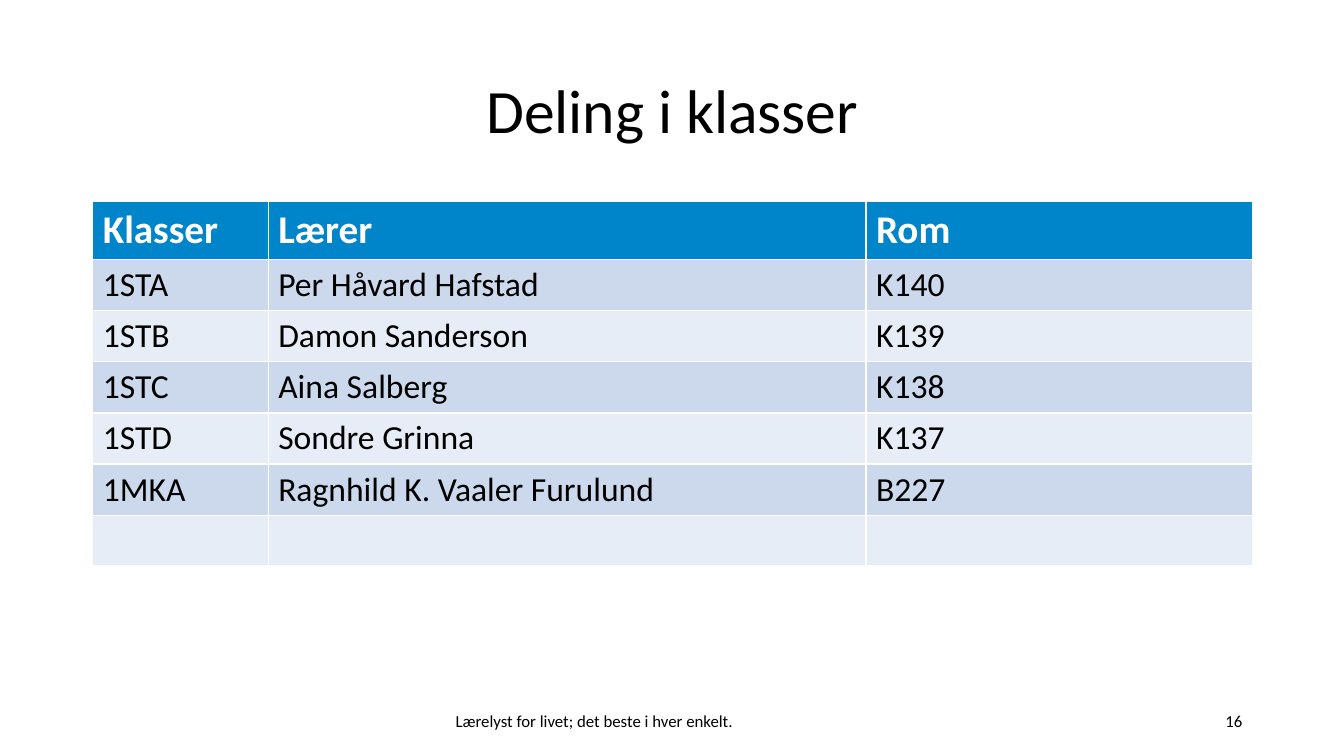
from typing import NamedTuple

from pptx import Presentation
from pptx.dml.color import RGBColor
from pptx.enum.text import MSO_ANCHOR, PP_ALIGN
from pptx.util import Inches, Pt

FONT = "Calibri"
BLACK = RGBColor(0x00, 0x00, 0x00)
WHITE = RGBColor(0xFF, 0xFF, 0xFF)
HEADER_BLUE = RGBColor(0x00, 0x85, 0xCA)
BANDS = (RGBColor(0xCC, 0xD9, 0xEC), RGBColor(0xE7, 0xED, 0xF6))

LEFT, CONTENT_WIDTH = 0.92, 11.5
COLUMN_WIDTHS = (1.74, 5.93, 3.83)
HEADER_HEIGHT, ROW_HEIGHT = 0.57, 0.505


class SchoolClass(NamedTuple):
    name: str
    teacher: str
    room: str


class FooterText(NamedTuple):
    text: str
    left: float
    width: float
    align: PP_ALIGN


HEADINGS = SchoolClass("Klasser", "Lærer", "Rom")
CLASSES = (
    SchoolClass("1STA", "Per Håvard Hafstad", "K140"),
    SchoolClass("1STB", "Damon Sanderson", "K139"),
    SchoolClass("1STC", "Aina Salberg", "K138"),
    SchoolClass("1STD", "Sondre Grinna", "K137"),
    SchoolClass("1MKA", "Ragnhild K. Vaaler Furulund", "B227"),
    SchoolClass("", "", ""),
)
FOOTERS = (
    FooterText("Lærelyst for livet; det beste i hver enkelt.", 4.42, 4.5, PP_ALIGN.LEFT),
    FooterText("16", 9.42, 3, PP_ALIGN.RIGHT),
)


def add_run(paragraph, text: str, size: float, color: RGBColor = BLACK, bold: bool = False) -> None:
    run = paragraph.add_run()
    run.text = text
    run.font.name = FONT
    run.font.size = Pt(size)
    run.font.bold = bold
    run.font.color.rgb = color


def format_title(title) -> None:
    title.left, title.top = Inches(LEFT), Inches(0.4)
    title.width, title.height = Inches(CONTENT_WIDTH), Inches(1.45)
    title.text_frame.vertical_anchor = MSO_ANCHOR.MIDDLE
    paragraph = title.text_frame.paragraphs[0]
    paragraph.alignment = PP_ALIGN.CENTER
    paragraph.line_spacing = 0.9
    add_run(paragraph, "Deling i klasser", 44)


def fill_row(table, index: int, entry: SchoolClass) -> None:
    is_header = index == 0
    table.rows[index].height = Inches(HEADER_HEIGHT if is_header else ROW_HEIGHT)
    for cell, text in zip(table.rows[index].cells, entry):
        cell.fill.solid()
        cell.fill.fore_color.rgb = HEADER_BLUE if is_header else BANDS[(index - 1) % 2]
        if text:
            size, color = (28, WHITE) if is_header else (24, BLACK)
            add_run(cell.text_frame.paragraphs[0], text, size, color, is_header)


def add_class_table(slide) -> None:
    entries = (HEADINGS, *CLASSES)
    height = HEADER_HEIGHT + ROW_HEIGHT * len(CLASSES)
    table = slide.shapes.add_table(
        len(entries), len(COLUMN_WIDTHS),
        Inches(LEFT), Inches(2), Inches(CONTENT_WIDTH), Inches(height),
    ).table
    table.horz_banding = False
    for column, width in zip(table.columns, COLUMN_WIDTHS):
        column.width = Inches(width)
    for index, entry in enumerate(entries):
        fill_row(table, index, entry)


def add_footer(slide, footer: FooterText) -> None:
    box = slide.shapes.add_textbox(
        Inches(footer.left), Inches(6.95), Inches(footer.width), Inches(0.4)
    )
    box.text_frame.word_wrap = True
    box.text_frame.vertical_anchor = MSO_ANCHOR.MIDDLE
    paragraph = box.text_frame.paragraphs[0]
    paragraph.alignment = footer.align
    add_run(paragraph, footer.text, 12)


def main() -> None:
    presentation = Presentation()
    presentation.slide_width, presentation.slide_height = Inches(13.33), Inches(7.5)
    slide = presentation.slides.add_slide(presentation.slide_layouts.get_by_name("Title Only"))

    # Title
    format_title(slide.shapes.title)

    # Classes with teacher and room
    add_class_table(slide)

    # Motto and page number
    for footer in FOOTERS:
        add_footer(slide, footer)

    presentation.save("out.pptx")


if __name__ == "__main__":
    main()
